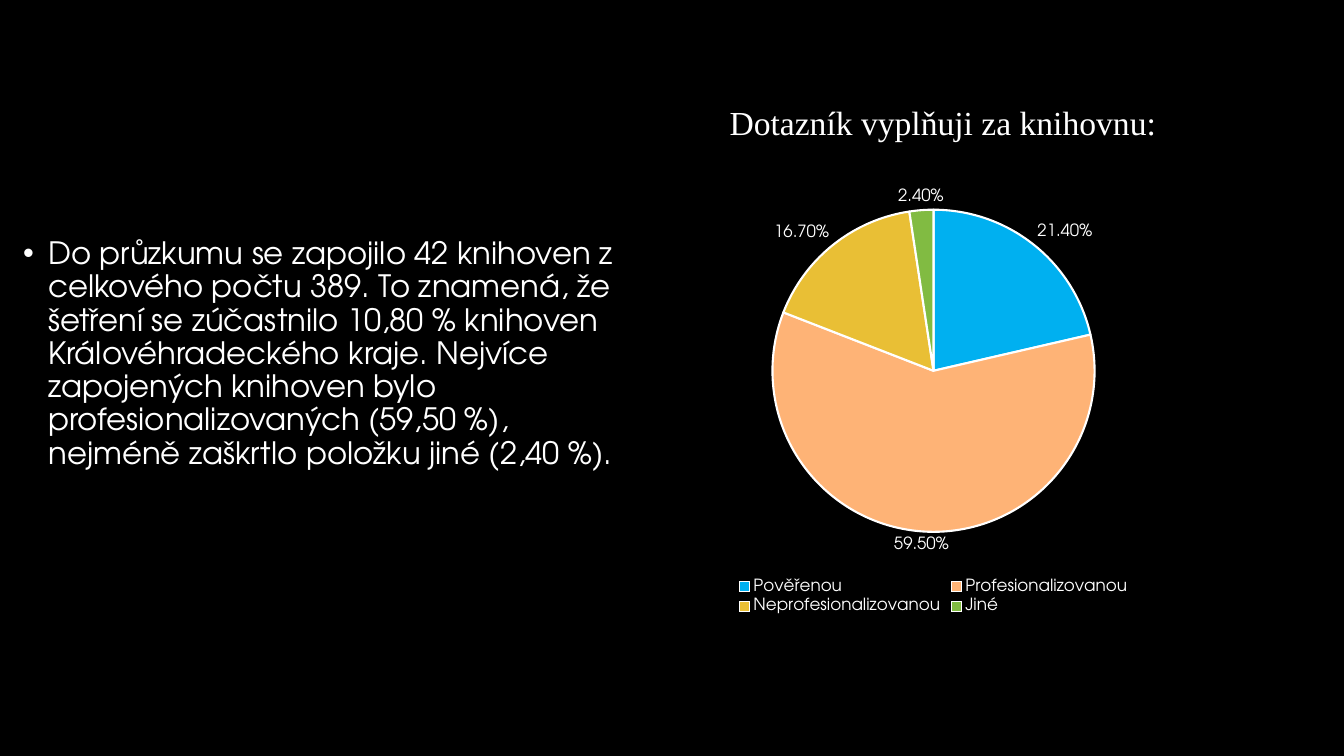
from lxml import etree
from pptx import Presentation
from pptx.chart.data import CategoryChartData
from pptx.dml.color import RGBColor
from pptx.enum.chart import XL_CHART_TYPE, XL_LABEL_POSITION, XL_LEGEND_POSITION
from pptx.oxml.ns import qn
from pptx.util import Pt

PIE = XL_CHART_TYPE.PIE
OUTSIDE_END = XL_LABEL_POSITION.OUTSIDE_END
BOTTOM = XL_LEGEND_POSITION.BOTTOM

BODY_FONT = "TeX Gyre Adventor"
TITLE_FONT = "Times New Roman"
WHITE = "FFFFFF"
BLACK = "000000"

TITLE = "Dotazník vyplňuji za knihovnu:"
SUMMARY = (
    "Do průzkumu se zapojilo 42 knihoven z celkového počtu 389. "
    "To znamená, že šetření se zúčastnilo 10,80 % knihoven "
    "Královéhradeckého kraje. Nejvíce zapojených knihoven bylo "
    "profesionalizovaných (59,50 %), nejméně zaškrtlo položku jiné (2,40 %)."
)
LIBRARY_SHARES = [
    ("Pověřenou", 0.214, "00B0F0"),
    ("Profesionalizovanou", 0.595, "FEB376"),
    ("Neprofesionalizovanou", 0.167, "E9BF35"),
    ("Jiné", 0.024, "81BB42"),
]


def color(value):
    """Turn a hex string into a colour."""
    return RGBColor.from_string(value)


def style_font(font, name, size):
    """Set the typeface, size and white colour of a font."""
    font.name = name
    font.size = Pt(size)
    font.color.rgb = color(WHITE)


def add_bullet(para, indent):
    """Give a paragraph a hanging round bullet."""
    properties = para._p.get_or_add_pPr()
    properties.set("marL", str(Pt(indent)))
    properties.set("indent", str(-Pt(indent)))
    etree.SubElement(properties, qn("a:buFont")).set("typeface", "Arial")
    etree.SubElement(properties, qn("a:buChar")).set("char", "•")


def add_text(page, left, top, width, height, text, font_name, size):
    """Add a wrapping text box with one run and return its paragraph."""
    box = page.shapes.add_textbox(Pt(left), Pt(top), Pt(width), Pt(height))
    box.text_frame.word_wrap = True
    para = box.text_frame.paragraphs[0]
    span = para.add_run()
    span.text = text
    style_font(span.font, font_name, size)
    return para


def add_pie(page, left, top, width, height, shares):
    """Add a pie chart with outside percentages and a legend below."""
    data = CategoryChartData(number_format="0.00%")
    data.categories = [name for name, _, _ in shares]
    data.add_series("Series 1", [value for _, value, _ in shares])
    frame = page.shapes.add_chart(
        PIE, Pt(left), Pt(top), Pt(width), Pt(height), data
    )
    chart = frame.chart
    chart.has_title = False
    style_font(chart.font, BODY_FONT, 10)
    chart.has_legend = True
    chart.legend.position = BOTTOM
    chart.legend.include_in_layout = False
    style_font(chart.legend.font, BODY_FONT, 12)

    plot = chart.plots[0]
    plot.vary_by_categories = True
    plot.has_data_labels = True
    labels = plot.data_labels
    labels.show_value = True
    labels.show_percentage = False
    labels.number_format = "0.00%"
    labels.number_format_is_linked = False
    labels.position = OUTSIDE_END
    style_font(labels.font, BODY_FONT, 12)

    for index, (_, _, fill) in enumerate(shares):
        slice_format = plot.series[0].points[index].format
        slice_format.fill.solid()
        slice_format.fill.fore_color.rgb = color(fill)
        slice_format.line.color.rgb = color(WHITE)
        slice_format.line.width = Pt(1.5)


def main():
    """Build the survey slide and save the deck."""
    deck = Presentation()
    deck.slide_width = Pt(960)
    deck.slide_height = Pt(540)
    page = deck.slides.add_slide(deck.slide_layouts[6])
    page.background.fill.solid()
    page.background.fill.fore_color.rgb = color(BLACK)

    summary = add_text(page, 9.5, 166.5, 441.5, 275, SUMMARY, BODY_FONT, 22)
    summary.line_spacing = 0.9
    add_bullet(summary, 18)
    add_pie(page, 373.5, 124.5, 586.5, 317, LIBRARY_SHARES)
    add_text(page, 514, 69, 392.5, 36, TITLE, TITLE_FONT, 24)

    deck.save("out.pptx")


if __name__ == "__main__":
    main()
